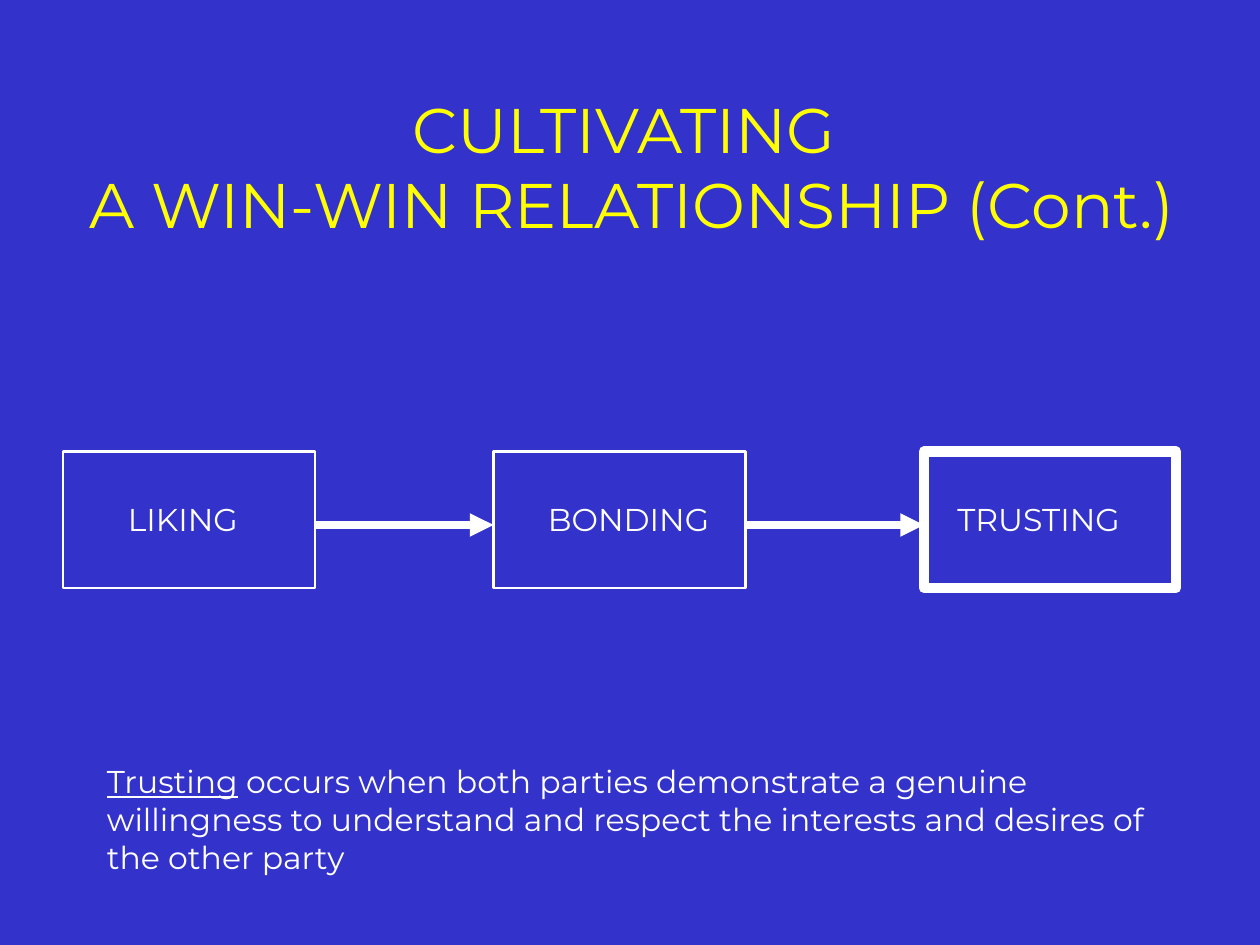
import pptx
import pptx.dml.color
import pptx.enum.shapes
import pptx.enum.text
import pptx.oxml
import pptx.oxml.ns
import pptx.util
from pptx.util import Pt

COLORS = {"background": "3333CC", "title": "FFFF00", "white": "FFFFFF"}
FONT = "Montserrat"
BOX_TOP, BOX_WIDTH, BOX_HEIGHT = 258, 144, 78
BOX_LEFT, BOX_PITCH = 36, 246
ARROW_Y = 300
# Label, its left edge, its width, outline weight of its box
STAGES = [
    ("LIKING", 66, 86, 1.5),
    ("BONDING", 306, 109, 1.5),
    ("TRUSTING", 540, 120, 6),
]


def color(name):
    return pptx.dml.color.RGBColor.from_string(COLORS[name])


def add_text(s, bounds, paragraphs, size, color_name, align="LEFT", wrap=False, grow=True):
    """Add a text box; each paragraph is a list of (text, underlined) runs."""
    tf = s.shapes.add_textbox(*map(Pt, bounds)).text_frame
    tf.word_wrap = wrap
    auto_size = pptx.enum.text.MSO_AUTO_SIZE
    tf.auto_size = auto_size.SHAPE_TO_FIT_TEXT if grow else auto_size.NONE
    for i, runs in enumerate(paragraphs):
        p = tf.add_paragraph() if i else tf.paragraphs[0]
        p.alignment = getattr(pptx.enum.text.PP_ALIGN, align)
        for text, underlined in runs:
            r = p.add_run()
            r.text = text
            r.font.name = FONT
            r.font.size = Pt(size)
            r.font.underline = underlined
            r.font.color.rgb = color(color_name)


def add_box(s, left, weight):
    sp = s.shapes.add_shape(
        pptx.enum.shapes.MSO_SHAPE.RECTANGLE,
        Pt(left), Pt(BOX_TOP), Pt(BOX_WIDTH), Pt(BOX_HEIGHT))
    sp.shadow.inherit = False
    sp.fill.background()
    sp.line.color.rgb = color("white")
    sp.line.width = Pt(weight)


def add_arrow(s, start, end):
    cx = s.shapes.add_connector(
        pptx.enum.shapes.MSO_CONNECTOR.STRAIGHT,
        Pt(start), Pt(ARROW_Y), Pt(end), Pt(ARROW_Y))
    cx.line.color.rgb = color("white")
    cx.line.width = Pt(4.5)
    head = pptx.oxml.parse_xml(
        f'<a:tailEnd {pptx.oxml.ns.nsdecls("a")} type="triangle"/>')
    cx.line._get_or_add_ln().append(head)
    cx._element.spPr.append(
        pptx.oxml.parse_xml(f'<a:effectLst {pptx.oxml.ns.nsdecls("a")}/>'))


def main():
    prs = pptx.Presentation()
    prs.slide_width, prs.slide_height = Pt(720), Pt(540)
    s = prs.slides.add_slide(prs.slide_layouts[6])
    s.background.fill.solid()
    s.background.fill.fore_color.rgb = color("background")

    title = [[("CULTIVATING", False)], [(" A WIN-WIN RELATIONSHIP (Cont.)", False)]]
    add_text(s, (60, 48, 593, 102), title, 36, "title", align="CENTER", grow=False)

    lefts = [BOX_LEFT + i * BOX_PITCH for i in range(len(STAGES))]
    for left, (_, _, _, weight) in zip(lefts, STAGES):
        add_box(s, left, weight)
    for left, next_left in zip(lefts, lefts[1:]):
        add_arrow(s, left + BOX_WIDTH, next_left)
    for label, left, width, _ in STAGES:
        add_text(s, (left, 282, width, 29), [[(label, False)]], 18, "white")

    definition = [
        ("Trusting", True),
        (" occurs when both parties demonstrate a genuine willingness to understand"
         " and respect the interests and desires of the other party", False),
    ]
    add_text(s, (54, 432, 618, 72), [definition], 18, "white", wrap=True)

    prs.save("out.pptx")


if __name__ == "__main__":
    main()
